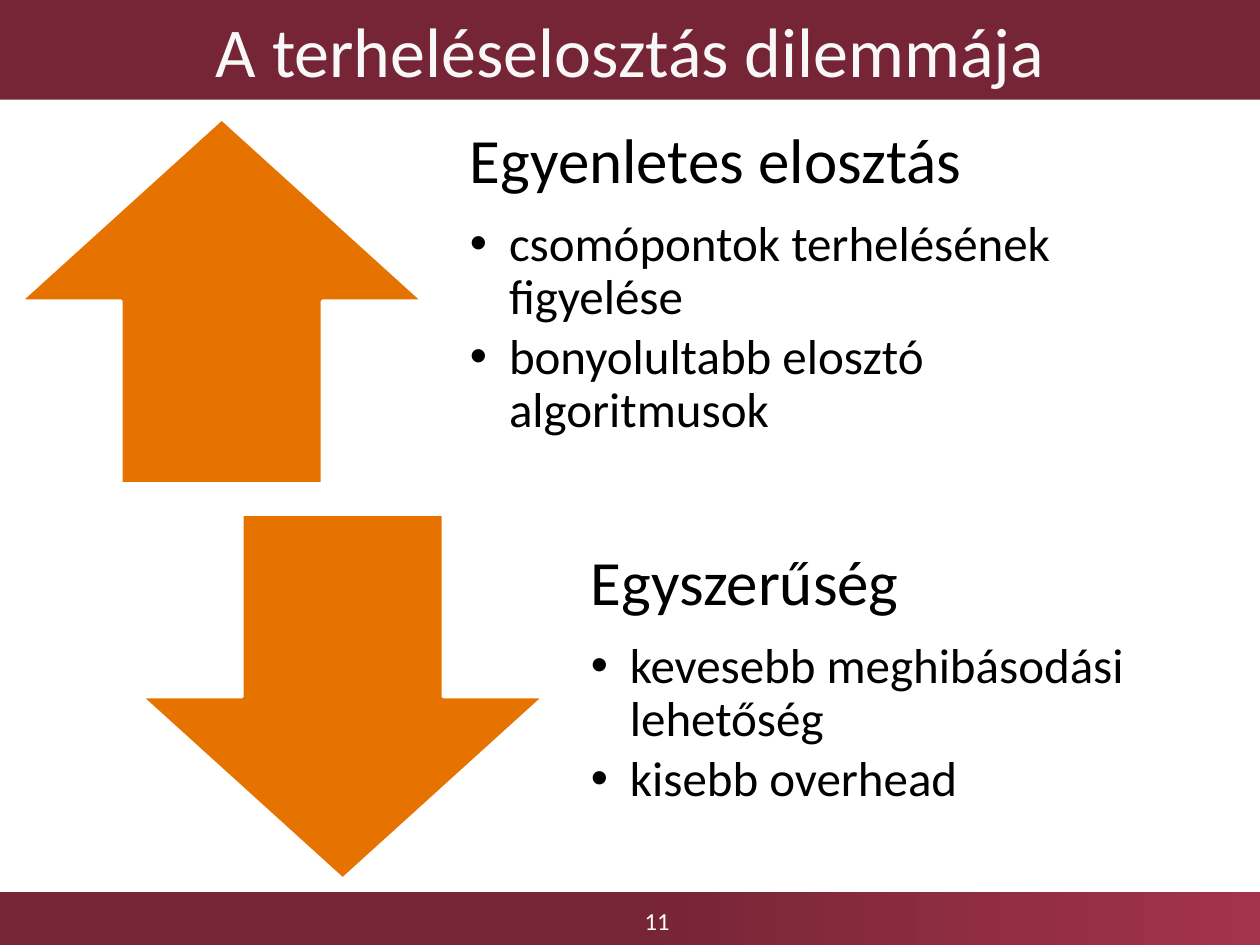
from dataclasses import dataclass

from lxml.etree import SubElement
from pptx import Presentation
from pptx.dml.color import RGBColor
from pptx.enum.shapes import MSO_SHAPE
from pptx.enum.text import MSO_ANCHOR, MSO_AUTO_SIZE, PP_ALIGN
from pptx.oxml.ns import qn
from pptx.util import Inches, Pt


@dataclass(frozen=True)
class Theme:
    font: str = "Calibri"
    wine: RGBColor = RGBColor.from_string("762536")
    wine_light: RGBColor = RGBColor.from_string("A3334B")
    orange: RGBColor = RGBColor.from_string("E67300")
    white: RGBColor = RGBColor.from_string("FFFFFF")
    title_text: RGBColor = RGBColor.from_string("F8F8F8")
    text: RGBColor = RGBColor.from_string("000000")
    title_size: int = 40
    heading_size: int = 36
    bullet_size: int = 28
    number_size: int = 14


THEME = Theme()

ARGUMENTS = [
    (MSO_SHAPE.UP_ARROW, "Egyenletes elosztás",
     ["csomópontok terhelésének figyelése", "bonyolultabb elosztó algoritmusok"]),
    (MSO_SHAPE.DOWN_ARROW, "Egyszerűség",
     ["kevesebb meghibásodási lehetőség", "kisebb overhead"]),
]


def format_runs(p, size, color):
    for r in p.runs:
        r.font.name = THEME.font
        r.font.size = Pt(size)
        r.font.color.rgb = color


def add_bullet(p, indent):
    pPr = p._p.get_or_add_pPr()
    pPr.set("marL", str(indent))
    pPr.set("indent", str(-indent))
    SubElement(pPr, qn("a:buFont")).set("typeface", "Arial")
    SubElement(pPr, qn("a:buChar")).set("char", "•")


def add_title(s, text, x, y, w, h):
    title = s.shapes.title
    title.left, title.top, title.width, title.height = x, y, w, h
    title.fill.solid()
    title.fill.fore_color.rgb = THEME.wine
    tf = title.text_frame
    tf.text = text
    tf.auto_size = MSO_AUTO_SIZE.NONE
    tf.vertical_anchor = MSO_ANCHOR.MIDDLE
    p = tf.paragraphs[0]
    p.alignment = PP_ALIGN.CENTER
    format_runs(p, THEME.title_size, THEME.title_text)


def add_footer(s, number, x, y, w, h):
    band = s.shapes.add_shape(MSO_SHAPE.RECTANGLE, x, y, w, h)
    band.shadow.inherit = False
    band.line.fill.background()
    band.fill.gradient()
    band.fill.gradient_angle = 0
    stops = [(0.5, THEME.wine), (1, THEME.wine_light)]
    for stop, (position, color) in zip(band.fill.gradient_stops, stops):
        stop.position = position
        stop.color.rgb = color

    sp = s.shapes.add_textbox(x + Inches(3.59), y + Inches(0.03),
                              Inches(3.25), Inches(0.39))
    tf = sp.text_frame
    tf.word_wrap = True
    tf.vertical_anchor = MSO_ANCHOR.MIDDLE
    tf.text = number
    p = tf.paragraphs[0]
    p.alignment = PP_ALIGN.CENTER
    format_runs(p, THEME.number_size, THEME.white)


def add_argument(s, arrow_type, heading, bullets, x, y, w, h):
    arrow_w, text_w = Inches(3.2), Inches(5.42)
    arrow = s.shapes.add_shape(arrow_type, x, y, arrow_w, h)
    arrow.shadow.inherit = False
    arrow.fill.solid()
    arrow.fill.fore_color.rgb = THEME.orange
    arrow.line.color.rgb = THEME.white
    arrow.line.width = Pt(2)

    sp = s.shapes.add_textbox(x + w - text_w, y, text_w, h)
    tf = sp.text_frame
    tf.word_wrap = True
    tf.vertical_anchor = MSO_ANCHOR.MIDDLE
    tf.margin_left = tf.margin_right = tf.margin_bottom = Inches(0.28)
    tf.margin_top = 0
    tf.text = "\n".join([heading, *bullets])
    for i, p in enumerate(tf.paragraphs):
        size, gap = (THEME.bullet_size, 0.15) if i else (THEME.heading_size, 0.35)
        if i:
            p.level = 1
            add_bullet(p, Inches(0.31))
        p.line_spacing = 0.9
        p.space_after = Pt(round(size * gap, 1))
        format_runs(p, size, THEME.text)


def main():
    prs = Presentation()
    prs.slide_width, prs.slide_height = Inches(10), Inches(7.5)
    s = prs.slides.add_slide(prs.slide_layouts[5])
    add_footer(s, "11", 0, Inches(7.08), prs.slide_width, Inches(0.42))
    add_title(s, "A terheléselosztás dilemmája", 0, 0, prs.slide_width, Inches(0.79))
    for i, (arrow_type, heading, bullets) in enumerate(ARGUMENTS):
        add_argument(s, arrow_type, heading, bullets,
                     Inches(0.16 + 0.96 * i), Inches(0.94 + 3.14 * i),
                     Inches(8.71), Inches(2.9))
    prs.save("out.pptx")


if __name__ == "__main__":
    main()
